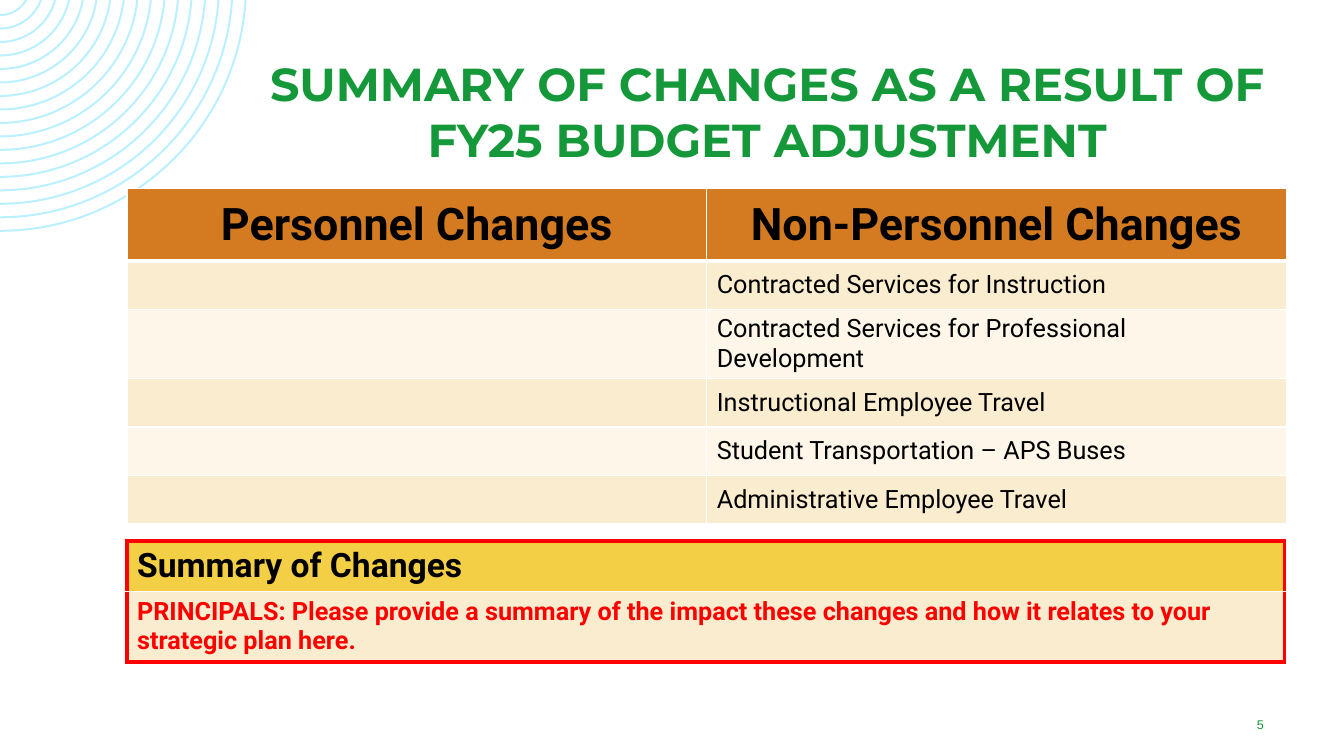
"""Build the slide on changes from the FY25 budget adjustment."""
from math import asin, cos, pi, sin, tan

from lxml.etree import SubElement
from pptx import Presentation
from pptx.dml.color import RGBColor as RGB
from pptx.enum.text import MSO_ANCHOR as Anchor, MSO_AUTO_SIZE as Auto, PP_ALIGN as Align
from pptx.oxml.ns import qn
from pptx.util import Inches as In, Pt

TITLE = "SUMMARY OF CHANGES AS A RESULT OF FY25 BUDGET ADJUSTMENT"
CHANGES = [
    ("Personnel Changes", "Non-Personnel Changes"),
    ("", "Contracted Services for Instruction"),
    ("", "Contracted Services for Professional Development"),
    ("", "Instructional Employee Travel"),
    ("", "Student Transportation – APS Buses"),
    ("", "Administrative Employee Travel"),
]
SUMMARY = [
    ("Summary of Changes",),
    ("PRINCIPALS: Please provide a summary of the impact these changes "
     "and how it relates to your strategic plan here.",),
]
PAGE = "5"

HUE = {"green": "159839", "ring": "BBF0FF", "head": "D47B22", "sand": "FAEDCF",
       "cream": "FDF6E9", "gold": "F3CF45", "red": "FF0000", "black": "000000",
       "white": "FFFFFF"}
FONT = {
    "title": dict(name="Montserrat", size=Pt(33), bold=True),
    "head": dict(name="Roboto", size=Pt(32), bold=True),
    "item": dict(name="Roboto", size=Pt(18), bold=False),
    "sum": dict(name="Roboto", size=Pt(24), bold=True),
    "note": dict(name="Roboto", size=Pt(18), bold=True),
    "page": dict(name="Arial", size=Pt(9), bold=False),
}
LEFT = 1.26
COUNT, RISE, OUTER, INNER, WIDTH = 17, 0.15, 2.45, 0.31, 0.02


def color(key):
    return RGB.from_string(HUE[key])


def write(frame, text, font, hue, align=Align.LEFT):
    para = frame.paragraphs[0]
    para.alignment = align
    run = para.add_run()
    run.text = text
    for key, val in FONT[font].items():
        setattr(run.font, key, val)
    run.font.color.rgb = color(hue)


def edge(cell, sides):
    props = cell._tc.get_or_add_tcPr()
    for spot, (side, (hue, width)) in enumerate(zip("LRTB", sides)):
        line = SubElement(props, qn("a:ln" + side), w=str(Pt(width)))
        fill = SubElement(line, qn("a:solidFill"))
        SubElement(fill, qn("a:srgbClr"), val=HUE[hue])
        props.insert(spot, line)


def grid(slide, rows, top, width, heights):
    cols = len(rows[0])
    box = slide.shapes.add_table(len(rows), cols, In(LEFT), In(top),
                                 In(width), In(sum(heights)))
    table = box.table
    table.horz_banding = False
    for col in table.columns:
        col.width = In(width / cols)
    for row, high in zip(table.rows, heights):
        row.height = In(high)
    return table


def arc(size):
    """Return start, two curve handles and end of an arc below the slide's top."""
    turn = asin(RISE / size)
    pull = 4 / 3 * tan((pi / 2 - turn) / 4) * size
    east, south = size * cos(turn), size - RISE
    dots = [(east, 0), (east - pull * sin(turn), pull * cos(turn)),
            (pull, south), (0, south)]
    return [(In(x), In(y)) for x, y in dots]


def draw_rings(slide):
    path, bends = None, []
    for num in range(COUNT):
        size = OUTER - num * (OUTER - INNER) / (COUNT - 1)
        far, near = arc(size), arc(size - WIDTH)[::-1]
        if path is None:
            path = slide.shapes.build_freeform(*far[0])
        else:
            path.move_to(*far[0])
        path.add_line_segments([far[3], near[0], near[3]], close=True)
        bends += [far[1:3], None, near[1:3]]
    shape = path.convert_to_shape()
    for node, bend in zip(list(shape._element.iter(qn("a:lnTo"))), bends):
        if bend:
            node.tag = qn("a:cubicBezTo")
            for spot, (x, y) in enumerate(bend):
                dot = SubElement(node, qn("a:pt"), x=str(x), y=str(y))
                node.insert(spot, dot)
    shape.shadow.inherit = False
    shape.fill.solid()
    shape.fill.fore_color.rgb = color("ring")
    shape.line.fill.background()


def draw_title(slide):
    title = slide.shapes.title
    title.left, title.top, title.width, title.height = map(In, (2.46, 0.5, 10.3, 1.47))
    frame = title.text_frame
    frame.word_wrap, frame.auto_size = True, Auto.NONE
    frame.vertical_anchor = Anchor.TOP
    write(frame, TITLE, "title", "green", Align.CENTER)


def draw_changes(slide):
    table = grid(slide, CHANGES, 1.87, 11.5, [0.72] + [0.48] * 5)
    thin, thick = ("white", 1), ("white", 3)
    for num, row in enumerate(CHANGES):
        for col, text in enumerate(row):
            cell = table.cell(num, col)
            cell.vertical_anchor = Anchor.MIDDLE
            cell.fill.solid()
            hue = "head" if num == 0 else ("cream", "sand")[num % 2]
            cell.fill.fore_color.rgb = color(hue)
            edge(cell, (thin, thin, thick if num == 1 else thin,
                        thick if num == 0 else thin))
            if text:
                write(cell.text_frame, text, "item" if num else "head", "black",
                      Align.LEFT if num else Align.CENTER)


def draw_summary(slide):
    table = grid(slide, SUMMARY, 5.37, 11.48, [0.41] * 2)
    red, thin = ("red", 3), ("white", 1)
    looks = [("gold", "sum", "black", (red, red, red, thin)),
             ("sand", "note", "red", (red, red, thin, red))]
    for num, (fill, font, hue, sides) in enumerate(looks):
        cell = table.cell(num, 0)
        cell.fill.solid()
        cell.fill.fore_color.rgb = color(fill)
        edge(cell, sides)
        write(cell.text_frame, SUMMARY[num][0], font, hue)


def draw_page(slide):
    frame = slide.shapes.add_textbox(*map(In, (11.96, 7.04, 1.08, 0.3))).text_frame
    frame.word_wrap = True
    frame.vertical_anchor = Anchor.MIDDLE
    write(frame, PAGE, "page", "green", Align.CENTER)


def main():
    deck = Presentation()
    deck.slide_width, deck.slide_height = In(13.33), In(7.5)
    slide = deck.slides.add_slide(deck.slide_layouts[5])
    for draw in (draw_rings, draw_title, draw_changes, draw_page, draw_summary):
        draw(slide)
    deck.save("out.pptx")


if __name__ == "__main__":
    main()
